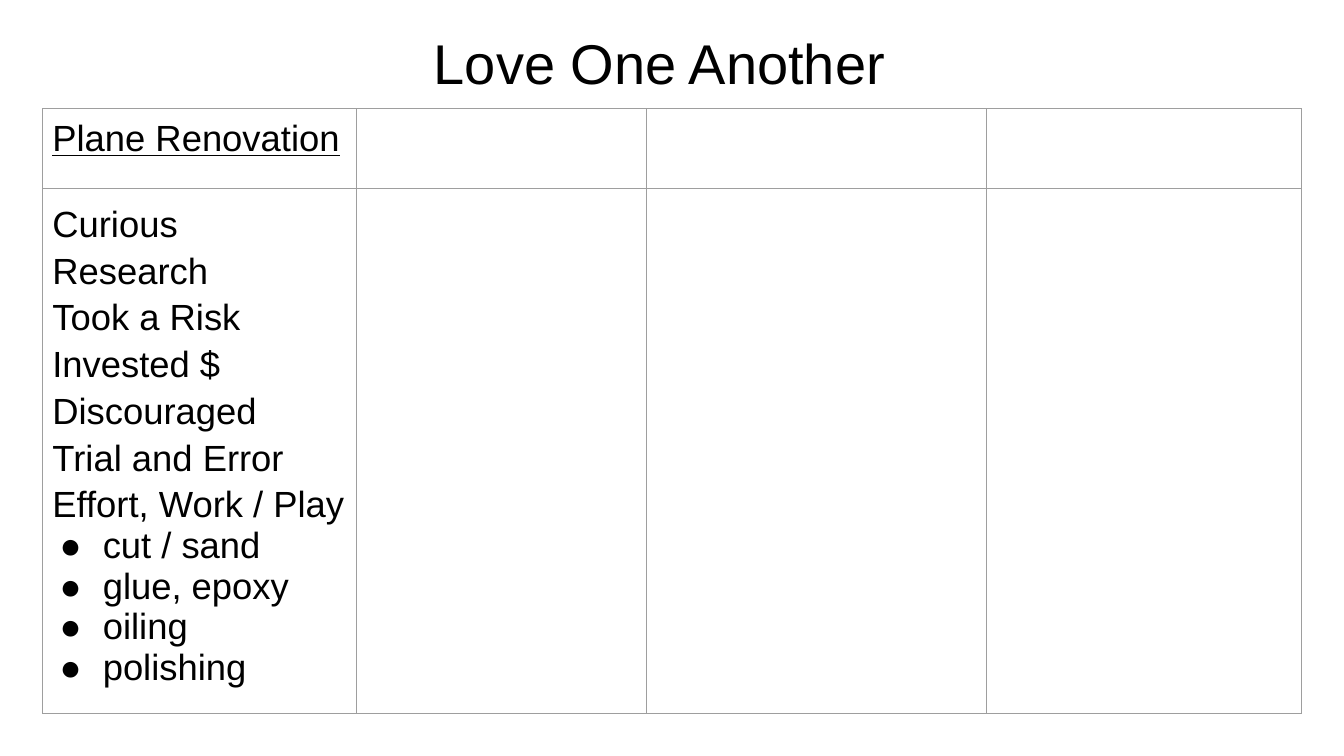
from lxml import etree
from pptx import Presentation
from pptx.dml.color import RGBColor
from pptx.enum import text
from pptx.oxml.ns import qn
from pptx.util import Cm, Pt

# Content
TITLE = "Love One Another"
HEADING = "Plane Renovation"
STEPS = ["Curious", "Research", "Took a Risk", "Invested $", "Discouraged",
         "Trial and Error", "Effort, Work / Play"]
TASKS = ["cut / sand", "glue, epoxy", "oiling", "polishing"]

# Format
COLORS = {"text": "000000", "cell": "FFFFFF", "border": "9E9E9E"}
COLUMN_WIDTHS = [7.92, 7.29, 8.59, 7.92]
ROW_HEIGHTS = [2.01, 13.23]
TABLE_LEFT, TABLE_TOP = 1.07, 2.74
CELL_MARGIN = 0.25
TITLE_BOX = {"left": 2.01, "top": 0.41, "width": 29.21, "height": 2.51}
TITLE_FONT = {"name": "Arial", "size": Pt(40), "bold": False}
BODY_FONT = {"name": "Arial", "size": Pt(26), "bold": False}
HEADING_FONT = {**BODY_FONT, "underline": True}


def set_font(font, values):
    for name, value in values.items():
        setattr(font, name, value)
    font.color.rgb = RGBColor.from_string(COLORS["text"])


def add_color(parent, tag, color):
    element = etree.SubElement(parent, qn(tag))
    etree.SubElement(element, qn("a:srgbClr"), val=color)


def add_bullet(paragraph):
    properties = paragraph._p.get_or_add_pPr()
    properties.set("marL", str(Cm(1.27)))
    properties.set("indent", str(-Cm(1.09)))
    add_color(properties, "a:buClr", COLORS["text"])
    etree.SubElement(properties, qn("a:buFont"), typeface="Arial")
    etree.SubElement(properties, qn("a:buChar"), char="●")


def format_cell(cell):
    for side in ("left", "right", "top", "bottom"):
        setattr(cell, f"margin_{side}", Cm(CELL_MARGIN))
    properties = cell._tc.get_or_add_tcPr()
    for tag in ("a:lnL", "a:lnR", "a:lnT", "a:lnB"):
        line = etree.SubElement(properties, qn(tag), w=str(Pt(0.75)))
        add_color(line, "a:solidFill", COLORS["border"])
    cell.fill.solid()
    cell.fill.fore_color.rgb = RGBColor.from_string(COLORS["cell"])


def main():
    presentation = Presentation()
    presentation.slide_width, presentation.slide_height = Cm(33.87), Cm(19.05)
    slide = presentation.slides.add_slide(presentation.slide_layouts[5])

    # Title
    title = slide.shapes.title
    for name, value in TITLE_BOX.items():
        setattr(title, name, Cm(value))
    title.text_frame.text = TITLE
    title.text_frame.auto_size = text.MSO_AUTO_SIZE.NONE
    title.text_frame.vertical_anchor = text.MSO_ANCHOR.MIDDLE
    paragraph = title.text_frame.paragraphs[0]
    paragraph.alignment = text.PP_ALIGN.CENTER
    paragraph.line_spacing = 0.93
    set_font(paragraph.runs[0].font, TITLE_FONT)

    # Table grid
    table = slide.shapes.add_table(
        len(ROW_HEIGHTS), len(COLUMN_WIDTHS), Cm(TABLE_LEFT), Cm(TABLE_TOP),
        Cm(sum(COLUMN_WIDTHS)), Cm(sum(ROW_HEIGHTS))).table
    table.first_row = table.horz_banding = False
    for column, width in zip(table.columns, COLUMN_WIDTHS):
        column.width = Cm(width)
    for row, height in zip(table.rows, ROW_HEIGHTS):
        row.height = Cm(height)
    for cell in table.iter_cells():
        format_cell(cell)

    # Heading, steps and bulleted tasks
    heading = table.cell(0, 0).text_frame
    heading.text = HEADING
    set_font(heading.paragraphs[0].runs[0].font, HEADING_FONT)
    body = table.cell(1, 0).text_frame
    body.text = "\n".join(STEPS + TASKS)
    for index, paragraph in enumerate(body.paragraphs):
        if index < len(STEPS):
            paragraph.line_spacing = 1.15
        else:
            add_bullet(paragraph)
        set_font(paragraph.runs[0].font, BODY_FONT)

    presentation.save("out.pptx")


if __name__ == "__main__":
    main()
